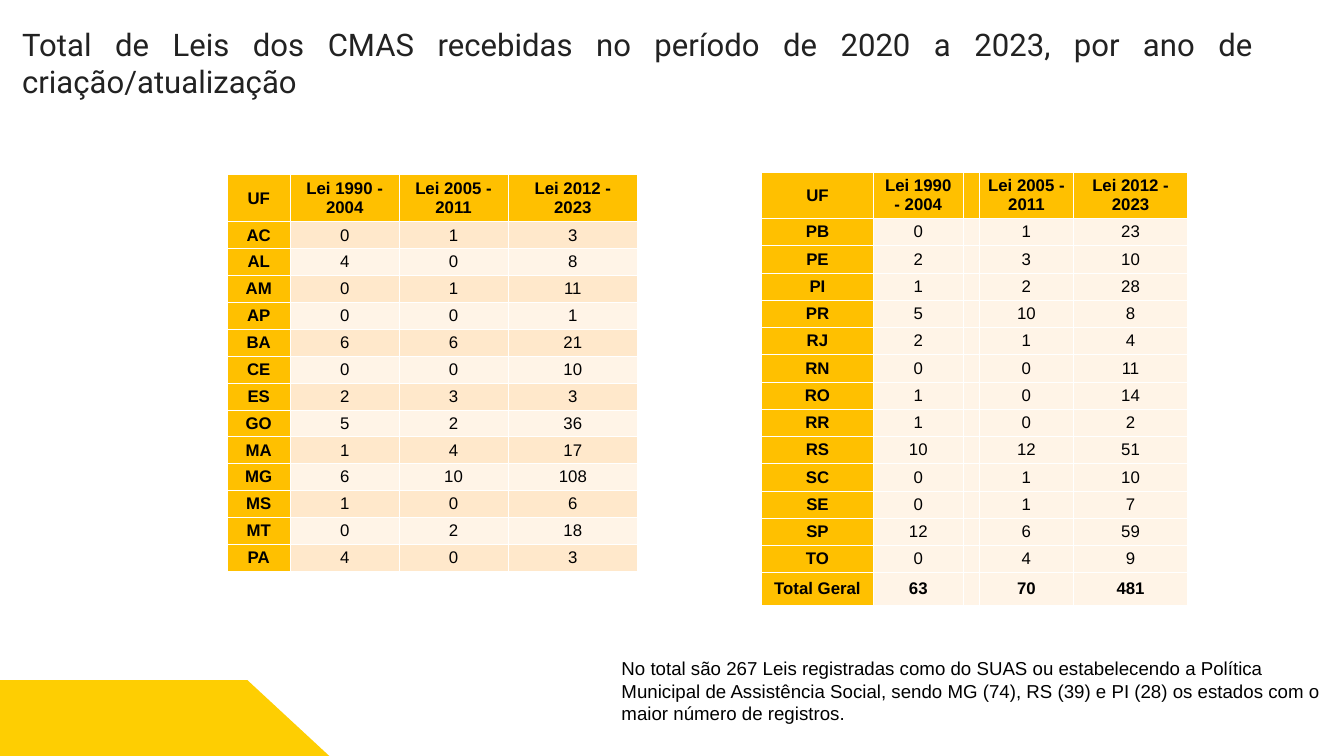
"""Build the slide of CMAS laws by state and by year of creation or update."""
import dataclasses

import lxml.etree
import pptx
import pptx.dml.color
import pptx.enum.text
import pptx.oxml.ns
import pptx.util

ALIGN = pptx.enum.text.PP_ALIGN
ANCHOR = pptx.enum.text.MSO_ANCHOR


@dataclasses.dataclass(frozen=True)
class Theme:
    """Colours, fonts and type sizes."""
    ink: str = "000000"
    dark: str = "222222"
    gold: str = "FFC000"
    sun: str = "FECE02"
    peach: str = "FFE8CB"
    cream: str = "FFF4E7"
    line: str = "FFFFFF"
    head: str = "Roboto"
    body: str = "Arial"
    title: float = 33.3
    lead: float = 39.9
    cell: float = 18
    note: float = 20
    rule: float = 0.91


class Deck:
    """Draw elements on one slide, on a grid of 20 columns by 11.25 rows."""

    def __init__(self, theme, cols=20, rows=11.25):
        """Open a title-only slide."""
        self.theme = theme
        self.file = pptx.Presentation()
        self.file.slide_width = pptx.util.Inches(20)
        self.file.slide_height = pptx.util.Inches(11.25)
        self.wide = self.file.slide_width / cols
        self.high = self.file.slide_height / rows
        self.slide = self.file.slides.add_slide(self.file.slide_layouts[5])

    def x(self, cols):
        """Turn columns into a length."""
        return pptx.util.Emu(round(cols * self.wide))

    def y(self, rows):
        """Turn rows into a length."""
        return pptx.util.Emu(round(rows * self.high))

    def box(self, left, top, width, height):
        """Turn grid places into lengths."""
        return self.x(left), self.y(top), self.x(width), self.y(height)

    def tint(self, fill, code):
        """Set a solid fill."""
        fill.solid()
        fill.fore_color.rgb = pptx.dml.color.RGBColor.from_string(code)

    def style(self, frame, text, font, size, code, bold=False, align=ALIGN.LEFT):
        """Write one paragraph and format it."""
        frame.word_wrap = True
        frame.text = text
        para = frame.paragraphs[0]
        para.alignment = align
        for run in para.runs:
            run.font.name = font
            run.font.size = pptx.util.Pt(size)
            run.font.bold = bold
            run.font.color.rgb = pptx.dml.color.RGBColor.from_string(code)

    def title(self, text, place):
        """Place and format the title."""
        shape = self.slide.shapes.title
        shape.left, shape.top, shape.width, shape.height = self.box(*place)
        frame = shape.text_frame
        look = self.theme
        self.style(frame, text, look.head, look.title, look.dark, align=ALIGN.JUSTIFY)
        frame.auto_size = pptx.enum.text.MSO_AUTO_SIZE.NONE
        frame.vertical_anchor = ANCHOR.TOP
        frame.margin_left = frame.margin_right = 0
        frame.margin_top = frame.margin_bottom = 0
        frame.paragraphs[0].line_spacing = pptx.util.Pt(look.lead)

    def note(self, text, place):
        """Add a text box."""
        frame = self.slide.shapes.add_textbox(*self.box(*place)).text_frame
        self.style(frame, text, self.theme.body, self.theme.note, self.theme.ink)

    def shape(self, points):
        """Add a closed outline."""
        spots = [(self.x(col), self.y(row)) for col, row in points]
        pen = self.slide.shapes.build_freeform(*spots[0])
        pen.add_line_segments(spots[1:], close=True)
        form = pen.convert_to_shape()
        form.shadow.inherit = False
        self.tint(form.fill, self.theme.sun)
        form.line.fill.background()

    def edge(self, cell):
        """Draw the four borders of a cell."""
        props = cell._tc.get_or_add_tcPr()
        qn = pptx.oxml.ns.qn
        for side in ("lnL", "lnR", "lnT", "lnB"):
            line = lxml.etree.SubElement(props, qn("a:" + side))
            line.set("w", str(pptx.util.Pt(self.theme.rule)))
            fill = lxml.etree.SubElement(line, qn("a:solidFill"))
            lxml.etree.SubElement(fill, qn("a:srgbClr")).set("val", self.theme.line)

    def table(self, data, left, top, widths, heights, bands):
        """Add a table with a gold first row and column, and banded values."""
        place = self.box(left, top, sum(widths), sum(heights))
        grid = self.slide.shapes.add_table(len(data), len(widths), *place).table
        grid.first_row = grid.horz_banding = False
        for col, width in zip(grid.columns, widths):
            col.width = self.x(width)
        for i, (row, height) in enumerate(zip(grid.rows, heights)):
            row.height = self.y(height)
            for j, cell in enumerate(row.cells):
                key = i == 0 or j == 0
                bold = key or data[i][0].startswith("Total")
                self.style(cell.text_frame, data[i][j], self.theme.body,
                           self.theme.cell, self.theme.ink, bold, ALIGN.CENTER)
                cell.vertical_anchor = ANCHOR.MIDDLE
                self.edge(cell)
                self.tint(cell.fill, self.theme.gold if key else bands[i % len(bands)])


WEST = """AC 0 1 3
AL 4 0 8
AM 0 1 11
AP 0 0 1
BA 6 6 21
CE 0 0 10
ES 2 3 3
GO 5 2 36
MA 1 4 17
MG 6 10 108
MS 1 0 6
MT 0 2 18
PA 4 0 3"""

EAST = """PB 0 1 23
PE 2 3 10
PI 1 2 28
PR 5 10 8
RJ 2 1 4
RN 0 0 11
RO 1 0 14
RR 1 0 2
RS 10 12 51
SC 0 1 10
SE 0 1 7
SP 12 6 59
TO 0 4 9"""


def main():
    """Build and save the slide."""
    look = Theme()
    deck = Deck(look)
    deck.shape([(-0.19, 10.12), (3.68, 10.12), (4.9, 11.25), (-1.41, 11.25)])
    deck.title("Total de Leis dos CMAS recebidas no período de 2020 a 2023, "
               "por ano de criação/atualização", (0.33, 0.38, 18.33, 1.1))
    head = ["UF", "Lei 1990 - 2004", "Lei 2005 - 2011", "Lei 2012 - 2023"]
    west = [head] + [row.split() for row in WEST.splitlines()]
    deck.table(west, 3.38, 2.6, [0.94, 1.62, 1.62, 1.93], [0.7] + [0.4] * 13,
               [look.cream, look.peach])
    east = [head] + [row.split() for row in EAST.splitlines()]
    east.append(["Total Geral", "63", "70", "481"])
    east = [row[:2] + [""] + row[2:] for row in east]
    deck.table(east, 11.33, 2.56, [1.67, 1.33, 0.23, 1.41, 1.69],
               [0.69] + [0.39] * 13 + [0.49], [look.cream])
    deck.note("No total são 267 Leis registradas como do SUAS ou estabelecendo a "
              "Política Municipal de Assistência Social, sendo MG (74), RS (39) e "
              "PI (28) os estados com o maior número de registros.",
              (9.15, 9.73, 10.7, 1.11))
    deck.file.save("out.pptx")


if __name__ == "__main__":
    main()
